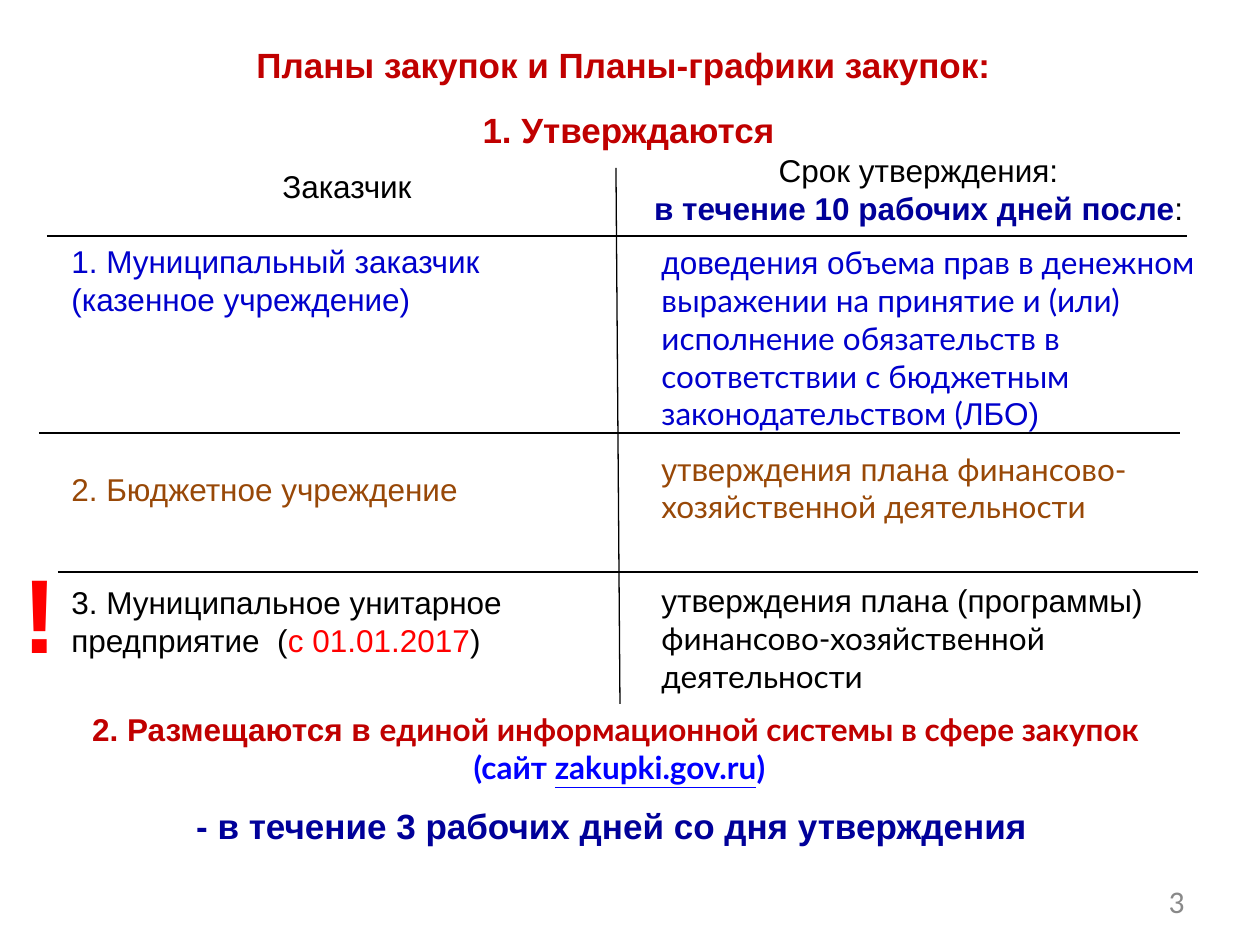
from dataclasses import dataclass

from lxml import etree
from pptx import Presentation
from pptx.dml.color import RGBColor
from pptx.enum.shapes import MSO_CONNECTOR
from pptx.enum.text import MSO_ANCHOR, PP_ALIGN
from pptx.oxml.ns import qn
from pptx.util import Emu, Pt

LEFT, CENTER, RIGHT = PP_ALIGN.LEFT, PP_ALIGN.CENTER, PP_ALIGN.RIGHT
TOP, MIDDLE = MSO_ANCHOR.TOP, MSO_ANCHOR.MIDDLE
STRAIGHT = MSO_CONNECTOR.STRAIGHT

PX_PER_INCH = 126
COLORS = {
    "black": "000000",
    "heading": "C00000",
    "navy": "000099",
    "blue": "0000CC",
    "site": "0000FF",
    "brown": "984807",
    "red": "FF0000",
    "gray": "898989",
}


@dataclass(frozen=True)
class Run:
    text: str
    color: str
    font: str = "Arial"
    size: int = 18
    bold: bool = False
    underline: bool = False


@dataclass(frozen=True)
class Para:
    runs: tuple[Run, ...]
    before: int = 0


@dataclass(frozen=True)
class Block:
    box: tuple[int, int, int, int]
    paras: tuple[Para, ...]
    align: PP_ALIGN = CENTER
    anchor: MSO_ANCHOR = TOP


@dataclass(frozen=True)
class Rule:
    x1: int
    y1: int
    x2: int
    y2: int


def px(n: int) -> Emu:
    return Emu(round(n * 914400 / PX_PER_INCH))


def rgb(name: str) -> RGBColor:
    return RGBColor.from_string(COLORS[name])


def fill_text(sp, block: Block) -> None:
    """Place the shape and write the block's paragraphs into it."""
    sp.left, sp.top, sp.width, sp.height = (px(n) for n in block.box)
    tf = sp.text_frame
    tf.word_wrap = True
    tf.vertical_anchor = block.anchor
    for i, para in enumerate(block.paras):
        p = tf.add_paragraph() if i else tf.paragraphs[0]
        p.alignment = block.align
        p.space_before = Pt(para.before)
        for run in para.runs:
            r = p.add_run()
            r.text = run.text
            r.font.name = run.font
            r.font.size = Pt(run.size)
            r.font.bold = run.bold
            r.font.underline = run.underline
            r.font.color.rgb = rgb(run.color)


def add_rule(s, rule: Rule) -> None:
    line = s.shapes.add_connector(
        STRAIGHT, px(rule.x1), px(rule.y1), px(rule.x2), px(rule.y2))
    line.line.color.rgb = rgb("black")
    line.line.width = Pt(0.75)
    etree.SubElement(line._element.spPr, qn("a:effectLst"))


TITLE = Block((23, 37, 1211, 123), (
    Para((Run("Планы закупок и Планы-графики закупок: ", "heading", size=20, bold=True),)),
    Para((Run("1. Утверждаются", "heading", size=20, bold=True),), before=13),
))

CUSTOMER_HEAD = Block((39, 161, 616, 50), (Para((Run("Заказчик", "black"),)),))

TERM_HEAD = Block((627, 145, 583, 89), (
    Para((Run("Срок утверждения:", "black"),)),
    Para((Run("в течение 10 рабочих дней после", "navy", bold=True), Run(":", "black"))),
))

CUSTOMERS = Block((59, 236, 541, 432), (
    Para((Run("1. Муниципальный заказчик (казенное учреждение)", "blue"),)),
    Para((Run("2. Бюджетное учреждение", "brown"),), before=87),
    Para((
        Run("3. Муниципальное унитарное предприятие  (", "black"),
        Run("с 01.01.2017", "red"),
        Run(")", "black"),
    ), before=43),
), LEFT)

TERMS = Block((649, 237, 576, 467), (
    Para((
        Run("доведения о", "blue"),
        Run("бъема прав в денежном выражении на принятие и (или) исполнение "
            "обязательств в соответствии с бюджетным законодательством (", "blue", "Lato"),
        Run("ЛБО)", "blue"),
    )),
    Para((
        Run("утверждения плана ", "brown"),
        Run("финансово-хозяйственной деятельности", "brown", "Lato"),
    ), before=10),
    Para((
        Run("утверждения плана (программы) ", "black"),
        Run("финансово-хозяйственной деятельности", "black", "Lato"),
    ), before=32),
), LEFT)

PLACEMENT = Block((14, 704, 1211, 89), (
    Para((
        Run("2. Размещаются в ", "heading", bold=True),
        Run("единой информационной системы в сфере закупок ", "heading", "Lato", bold=True),
    )),
    Para((
        Run("(сайт ", "site", "Lato", bold=True),
        Run("zakupki.gov.ru", "site", "Lato", bold=True, underline=True),
        Run(")", "site", "Lato", bold=True),
    )),
))

DEADLINE = Block((60, 798, 1113, 55), (
    Para((Run("- в течение 3 рабочих дней со дня утверждения ", "navy", size=20, bold=True),)),
))

WARNING = Block((10, 542, 47, 140), (Para((Run("!", "red", size=60, bold=True),)),))

PAGE_NUMBER = Block((903, 876, 294, 50), (Para((Run("3", "gray", "Calibri"),)),), RIGHT, MIDDLE)

TEXTS = (CUSTOMER_HEAD, TERM_HEAD, CUSTOMERS, TERMS, PLACEMENT, DEADLINE, WARNING, PAGE_NUMBER)

RULES = (
    Rule(616, 168, 620, 704),
    Rule(47, 236, 1187, 236),
    Rule(39, 433, 1180, 433),
    Rule(58, 572, 1198, 572),
)


def main() -> None:
    prs = Presentation()
    prs.slide_width, prs.slide_height = px(1260), px(945)
    s = prs.slides.add_slide(prs.slide_layouts[5])
    fill_text(s.shapes.title, TITLE)
    for rule in RULES:
        add_rule(s, rule)
    for block in TEXTS:
        fill_text(s.shapes.add_textbox(*(px(n) for n in block.box)), block)
    prs.save("out.pptx")


if __name__ == "__main__":
    main()
